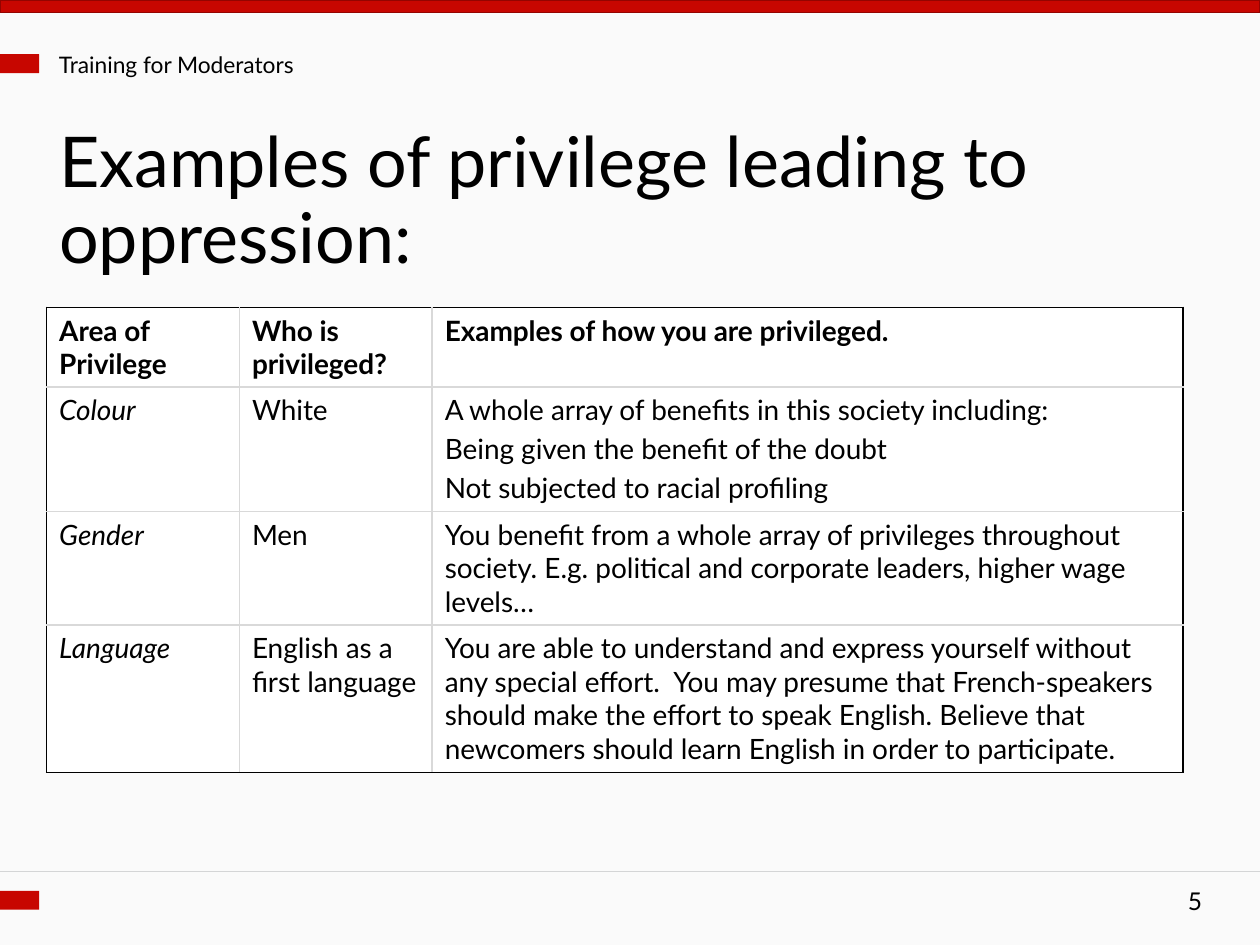
from pptx import Presentation
from pptx.dml.color import RGBColor
from pptx.enum.shapes import MSO_CONNECTOR, MSO_SHAPE
from pptx.enum.text import MSO_ANCHOR, MSO_AUTO_SIZE, PP_ALIGN
from pptx.oxml.ns import qn
from pptx.util import Inches, Pt
from lxml.etree import SubElement, Element

# Content
TITLE = "Examples of privilege leading to oppression:"
HEADER = "Training for Moderators"
PAGE = "5"
ROWS = [
    (["Area of Privilege"], ["Who is privileged?"],
     ["Examples of how you are privileged."]),
    (["Colour"], ["White"],
     ["A whole array of benefits in this society including:",
      "Being given the benefit of the doubt",
      "Not subjected to racial profiling"]),
    (["Gender"], ["Men"],
     ["You benefit from a whole array of privileges throughout society. "
      "E.g. political and corporate leaders, higher wage levels…"]),
    (["Language"], ["English as a first language"],
     ["You are able to understand and express yourself without any special "
      "effort.  You may presume that French-speakers should make the effort "
      "to speak English. Believe that newcomers should learn English in "
      "order to participate."]),
]

# Format
FONT = "Lato"
BLACK, WHITE, PAPER = "000000", "FFFFFF", "FAFAFA"
RED, DARK_RED, RULE, GRID = "C70600", "930400", "D4D5D6", "D9D9D9"
COLUMN_WIDTHS = [1.53, 1.53, 5.96]
ROW_HEIGHTS = [0.63, 0.99, 0.9, 1.17]
LEFT = 0.37
TAB_TOPS = [0.43, 7.07]


def color(value):
    return RGBColor.from_string(value)


def write(frame, paragraphs, size, bold=False, italic=False, **layout):
    for i, words in enumerate(paragraphs):
        paragraph = frame.paragraphs[0] if i == 0 else frame.add_paragraph()
        run = paragraph.add_run()
        run.text = words
        run.font.color.rgb = color(BLACK)
        settings = {"name": FONT, "size": Pt(size), "bold": bold, "italic": italic}
        for key, value in settings.items():
            setattr(run.font, key, value)
        layout["space_before"] = Pt(3.2 if i else 0)
        for key, value in layout.items():
            setattr(paragraph, key, value)


def set_frame(frame):
    settings = {"word_wrap": True, "auto_size": MSO_AUTO_SIZE.NONE,
                "vertical_anchor": MSO_ANCHOR.MIDDLE,
                "margin_left": Inches(0.1), "margin_right": Inches(0.1),
                "margin_top": Inches(0.05), "margin_bottom": Inches(0.05)}
    for key, value in settings.items():
        setattr(frame, key, value)
    return frame


def add_block(slide, kind, box, line=None):
    block = slide.shapes.add_shape(kind, *map(Inches, box))
    block.shadow.inherit = False
    block.fill.solid()
    block.fill.fore_color.rgb = color(RED)
    if line:
        block.line.color.rgb = color(line)
        block.line.width = Pt(1)
    else:
        block.line.fill.background()
    return block


def add_label(slide, box, words, size, align):
    label = slide.shapes.add_textbox(*map(Inches, box))
    write(set_frame(label.text_frame), [words], size, alignment=align)


def set_borders(cell, edges):
    properties = cell._tc.get_or_add_tcPr()
    for i, (side, value) in enumerate(edges.items()):
        line = Element(qn(f"a:ln{side}"), w=str(Pt(1)))
        fill = SubElement(line, qn("a:solidFill"))
        SubElement(fill, qn("a:srgbClr"), val=value)
        properties.insert(i, line)


def add_privilege_table(slide):
    last_row, last_column = len(ROWS) - 1, len(COLUMN_WIDTHS) - 1
    table = slide.shapes.add_table(
        len(ROWS), len(COLUMN_WIDTHS), Inches(LEFT), Inches(2.44),
        Inches(sum(COLUMN_WIDTHS)), Inches(sum(ROW_HEIGHTS))).table
    table.horz_banding = False
    for column, width in zip(table.columns, COLUMN_WIDTHS):
        column.width = Inches(width)
    for row, height in zip(table.rows, ROW_HEIGHTS):
        row.height = Inches(height)
    for r, row in enumerate(ROWS):
        for c, paragraphs in enumerate(row):
            cell = table.cell(r, c)
            cell.fill.solid()
            cell.fill.fore_color.rgb = color(WHITE)
            write(cell.text_frame, paragraphs, 16, bold=r == 0,
                  italic=r > 0 and c == 0)
            # Black around the table, grey between the cells
            outer = {"L": c == 0, "R": c == last_column,
                     "T": r == 0, "B": r == last_row}
            set_borders(cell, {side: BLACK if edge else GRID
                               for side, edge in outer.items()})


def main():
    deck = Presentation()
    deck.slide_width, deck.slide_height = Inches(10), Inches(7.5)
    slide = deck.slides.add_slide(deck.slide_layouts[5])
    slide.background.fill.solid()
    slide.background.fill.fore_color.rgb = color(PAPER)

    # Top band, side tabs and footer rule
    add_block(slide, MSO_SHAPE.RECTANGLE, (0, 0, 10, 0.1), DARK_RED)
    for top in TAB_TOPS:
        tab = add_block(slide, MSO_SHAPE.ROUNDED_RECTANGLE, (0, top, 0.31, 0.15))
        tab.adjustments[0] = 0.01
    rule = slide.shapes.add_connector(
        MSO_CONNECTOR.STRAIGHT, 0, Inches(6.92), Inches(10), Inches(6.92))
    rule.line.color.rgb = color(RULE)
    rule.line.width = Pt(0.5)
    SubElement(rule._element.spPr, qn("a:effectLst"))

    # Title
    title = slide.shapes.title
    place = {"left": LEFT, "top": 0.77, "width": 9.27, "height": 1.68}
    for key, value in place.items():
        setattr(title, key, Inches(value))
    write(set_frame(title.text_frame), [TITLE], 40,
          alignment=PP_ALIGN.LEFT, line_spacing=0.9)

    # Table, header and page number
    add_privilege_table(slide)
    add_label(slide, (LEFT, 0.38, 5.84, 0.27), HEADER, 13, PP_ALIGN.LEFT)
    add_label(slide, (7.06, 6.95, 2.58, 0.4), PAGE, 14, PP_ALIGN.RIGHT)
    deck.save("out.pptx")


if __name__ == "__main__":
    main()
